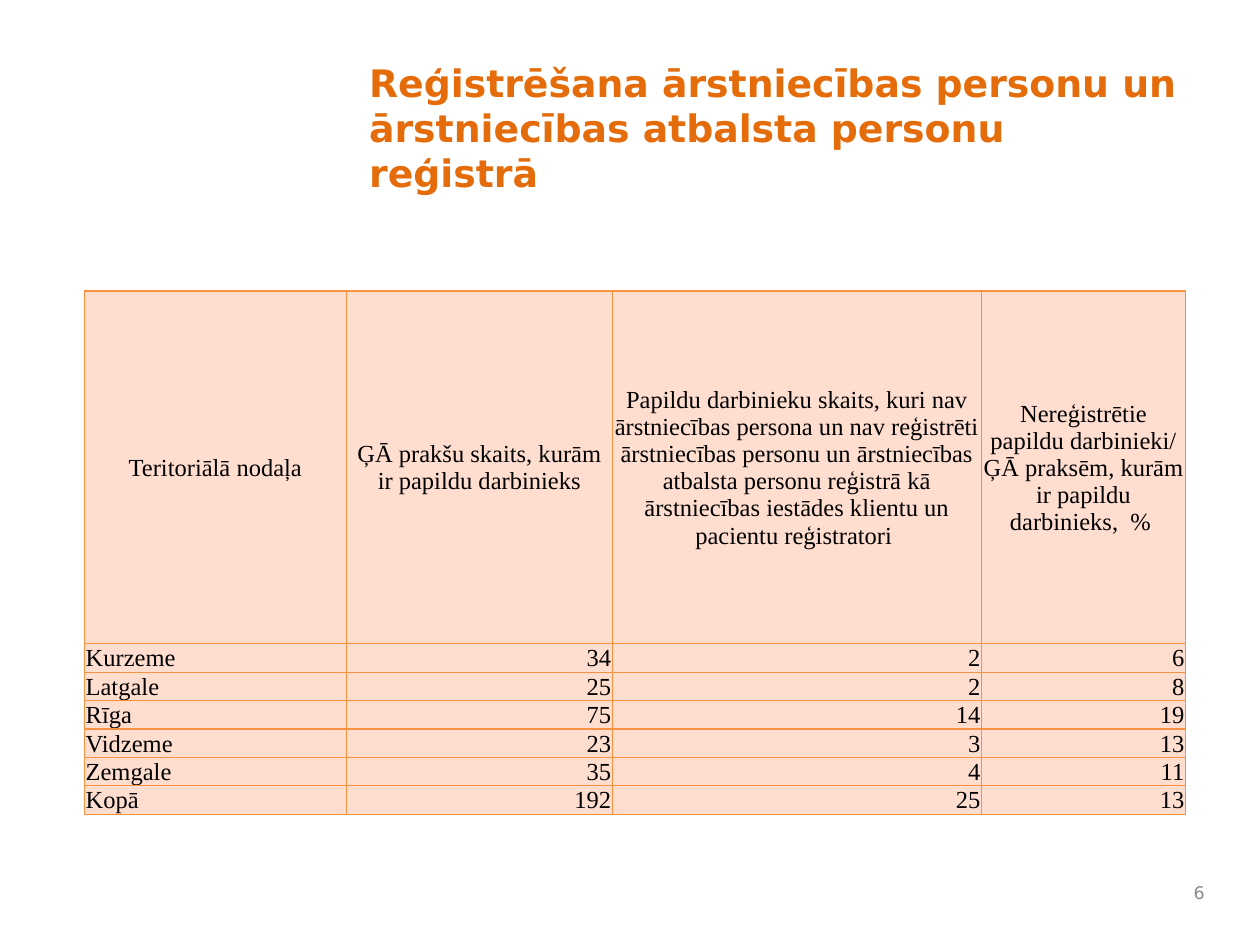
from lxml import etree
from pptx import Presentation
from pptx.dml.color import RGBColor
from pptx.enum.text import MSO_ANCHOR, MSO_AUTO_SIZE, PP_ALIGN
from pptx.oxml.ns import qn
from pptx.util import Inches, Pt

LEFT, CENTER, RIGHT = PP_ALIGN.LEFT, PP_ALIGN.CENTER, PP_ALIGN.RIGHT
TOP, MIDDLE = MSO_ANCHOR.TOP, MSO_ANCHOR.MIDDLE
COLORS = {"title": "E46C0A", "text": "000000", "number": "898989",
          "cell": "FFDDCF", "border": "F69240"}
SANS, SERIF = "DejaVu Sans", "Times New Roman"

TITLE = "Reģistrēšana ārstniecības personu un ārstniecības atbalsta personu reģistrā"
HEADER = (
    "Teritoriālā nodaļa",
    "ĢĀ prakšu skaits, kurām ir papildu darbinieks",
    "Papildu darbinieku skaits, kuri nav ārstniecības persona un nav reģistrēti "
    "ārstniecības personu un ārstniecības atbalsta personu reģistrā kā "
    "ārstniecības iestādes klientu un pacientu reģistratori ",
    "Nereģistrētie papildu darbinieki/ ĢĀ praksēm, kurām ir papildu darbinieks,  % ",
)
REGIONS = [
    ("Kurzeme", 34, 2, 6),
    ("Latgale", 25, 2, 8),
    ("Rīga", 75, 14, 19),
    ("Vidzeme", 23, 3, 13),
    ("Zemgale", 35, 4, 11),
    ("Kopā", 192, 25, 13),
]
COLUMN_WIDTHS = (2.08, 2.11, 2.93, 1.62)
HEADER_HEIGHT, ROW_HEIGHT = 2.8, 0.22


def write(frame, text, size, font, color, align, bold=False):
    frame.text = text
    paragraph = frame.paragraphs[0]
    paragraph.alignment = align
    paragraph.font.size = Pt(size)
    paragraph.font.name = font
    paragraph.font.bold = bold
    paragraph.font.color.rgb = RGBColor.from_string(COLORS[color])


def add_borders(cell):
    properties = cell._tc.get_or_add_tcPr()
    for position, side in enumerate(("a:lnL", "a:lnR", "a:lnT", "a:lnB")):
        line = etree.Element(qn(side), w=str(Pt(0.75)))
        fill = etree.SubElement(line, qn("a:solidFill"))
        etree.SubElement(fill, qn("a:srgbClr"), val=COLORS["border"])
        properties.insert(position, line)


def add_title(page):
    title = page.shapes.title
    title.left, title.top, title.width, title.height = map(
        Inches, (2.83, 0.42, 6.67, 1.13))
    frame = title.text_frame
    frame.auto_size = MSO_AUTO_SIZE.NONE
    frame.word_wrap = True
    frame.vertical_anchor = TOP
    write(frame, TITLE, 21.6, SANS, "title", LEFT, bold=True)


def add_region_table(page):
    rows = [HEADER] + REGIONS
    heights = [HEADER_HEIGHT] + [ROW_HEIGHT] * len(REGIONS)
    table = page.shapes.add_table(
        len(rows), len(HEADER), Inches(0.67), Inches(2.31),
        Inches(sum(COLUMN_WIDTHS)), Inches(sum(heights))).table
    for column, width in zip(table.columns, COLUMN_WIDTHS):
        column.width = Inches(width)
    for r, (values, height) in enumerate(zip(rows, heights)):
        table.rows[r].height = Inches(height)
        for c, value in enumerate(values):
            cell = table.cell(r, c)
            cell.margin_left = cell.margin_right = cell.margin_top = Inches(0.01)
            cell.margin_bottom = 0
            cell.vertical_anchor = MIDDLE
            cell.fill.solid()
            cell.fill.fore_color.rgb = RGBColor.from_string(COLORS["cell"])
            align = CENTER if r == 0 else LEFT if c == 0 else RIGHT
            write(cell.text_frame, str(value), 14, SERIF, "text", align)
            add_borders(cell)


def add_page_number(page):
    box = page.shapes.add_textbox(*map(Inches, (9.33, 6.92, 0.33, 0.33)))
    box.text_frame.word_wrap = True
    box.text_frame.vertical_anchor = MIDDLE
    write(box.text_frame, "6", 10, SANS, "number", RIGHT)


def main():
    deck = Presentation()
    deck.slide_width, deck.slide_height = Inches(10), Inches(7.5)
    page = deck.slides.add_slide(deck.slide_layouts[5])
    add_title(page)
    add_region_table(page)
    add_page_number(page)
    deck.save("out.pptx")


if __name__ == "__main__":
    main()
